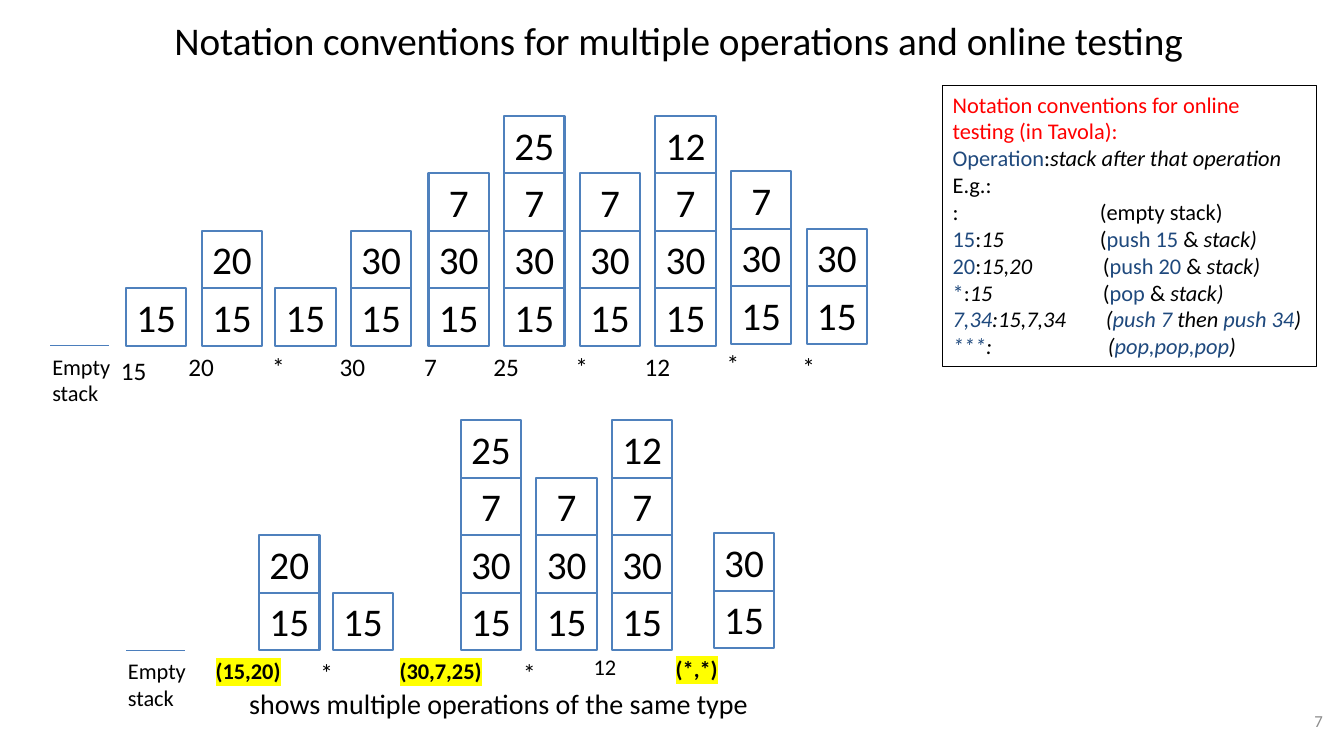
"""Build a slide on stack notation for multiple operations and online testing."""
from lxml.etree import SubElement
from pptx import Presentation
from pptx.dml.color import RGBColor
from pptx.enum.shapes import MSO_CONNECTOR, MSO_SHAPE
from pptx.enum.text import MSO_ANCHOR, PP_ALIGN
from pptx.oxml.ns import qn
from pptx.util import Inches, Pt

BLACK = RGBColor(0x00, 0x00, 0x00)
RED = RGBColor(0xFF, 0x00, 0x00)
NAVY = RGBColor(0x1F, 0x49, 0x7D)
GRAY = RGBColor(0x8C, 0x8C, 0x8C)
CELL_BLUE = RGBColor(0x4F, 0x81, 0xBD)
FLOOR_BLUE = RGBColor(0x4B, 0x7E, 0xBC)
YELLOW = RGBColor(0xFF, 0xFF, 0x00)
LEFT, CENTER, RIGHT = PP_ALIGN.LEFT, PP_ALIGN.CENTER, PP_ALIGN.RIGHT

TITLE = "Notation conventions for multiple operations and online testing"
CAPTION = "shows multiple operations of the same type"
PAGE_NUMBER = "7"
EMPTY_LABEL = "Empty stack"

STACKS = [
    (1.25, 3.43, [15]),
    (2.0, 3.43, [15, 20]),
    (2.73, 3.43, [15]),
    (3.48, 3.43, [15, 30]),
    (4.25, 3.43, [15, 30, 7]),
    (5.0, 3.43, [15, 30, 7, 25]),
    (5.75, 3.43, [15, 30, 7]),
    (6.5, 3.43, [15, 30, 7, 12]),
    (7.25, 3.41, [15, 30, 7]),
    (8.0, 3.41, [15, 30]),
    (2.57, 6.45, [15, 20]),
    (3.3, 6.45, [15]),
    (4.57, 6.45, [15, 30, 7, 25]),
    (5.32, 6.45, [15, 30, 7]),
    (6.07, 6.45, [15, 30, 7, 12]),
    (7.08, 6.43, [15, 30]),
]
EMPTY_STACKS = [(0.5, 3.43), (1.25, 6.45)]

SINGLE_OPERATIONS = [
    ("15", 1.1, 3.48, 0.53, LEFT),
    ("20", 1.77, 3.44, 0.53, LEFT),
    ("*", 2.6, 3.44, 0.33, LEFT),
    ("30", 3.27, 3.44, 0.5, LEFT),
    ("7", 4.02, 3.44, 0.5, CENTER),
    ("25", 4.77, 3.44, 0.5, CENTER),
    ("*", 5.52, 3.44, 0.5, CENTER),
    ("12", 6.27, 3.44, 0.5, CENTER),
    ("*", 7.02, 3.41, 0.5, CENTER),
    ("*", 7.77, 3.44, 0.5, CENTER),
    ("*", 3.08, 6.47, 0.33, LEFT),
    ("*", 5.0, 6.47, 0.5, CENTER),
]
GROUPED_OPERATIONS = [
    ("(15,20)", 2.04, 6.47, 0.87, LEFT),
    ("(30,7,25)", 3.83, 6.47, 1.08, CENTER),
    ("(*,*)", 6.57, 6.45, 0.68, CENTER),
]
LAST_PUSH = ("12", 5.75, 6.43, 0.5, CENTER)

PLAIN = {"color": BLACK}
ITALIC = {"color": BLACK, "italic": True}
BLUE = {"color": NAVY}
BLUE_ITALIC = {"color": NAVY, "italic": True}
HEADING = {"color": RED}

CONVENTIONS = [
    (None, [("Notation conventions for online", HEADING)]),
    (None, [("testing (in Tavola):", HEADING)]),
    (None, [("Operation", BLUE), (":", PLAIN), ("stack after that operation", ITALIC)]),
    (None, [("E.g.:", PLAIN)]),
    (1.46, [(":\t(empty stack)", PLAIN)]),
    (1.46, [("15", BLUE), (":", PLAIN), ("15", ITALIC), ("\t(", PLAIN),
            ("push 15 ", BLUE), ("& ", PLAIN), ("stack)", ITALIC)]),
    (1.49, [("20", BLUE), (":", PLAIN), ("15,20", ITALIC), ("\t(", PLAIN),
            ("push 20 ", BLUE), ("& ", PLAIN), ("stack)", ITALIC)]),
    (1.49, [("*", BLUE), (":", PLAIN), ("15", ITALIC), ("\t(", PLAIN),
            ("pop", BLUE), (" & ", PLAIN), ("stack)", ITALIC)]),
    (1.52, [("7,34", BLUE_ITALIC), (":15,7,34\t(", ITALIC), ("push 7", BLUE_ITALIC),
            (" then ", ITALIC), ("push 34", BLUE_ITALIC), (")", ITALIC)]),
    (1.54, [("***", BLUE_ITALIC), (":\t(", ITALIC), ("pop,pop,pop", BLUE_ITALIC),
            (")", ITALIC)]),
]

CELL_WIDTH, CELL_HEIGHT = 0.6, 0.57
FLOOR_WIDTH = 0.58


def add_run(paragraph, text, size, color=BLACK, **style):
    run = paragraph.add_run()
    run.text = text
    run.font.color.rgb = color
    for name, value in {"name": "Calibri", "size": Pt(size), **style}.items():
        setattr(run.font, name, value)
    return run


def add_label(slide, text, left, top, width, align, height=0.4, size=18,
              anchor=MSO_ANCHOR.TOP, **style):
    label = slide.shapes.add_textbox(*map(Inches, (left, top, width, height)))
    frame = label.text_frame
    frame.word_wrap = True
    frame.vertical_anchor = anchor
    frame.paragraphs[0].alignment = align
    return add_run(frame.paragraphs[0], text, size, **style)


def add_box(slide, left, top, width, height, color, weight):
    box = slide.shapes.add_shape(
        MSO_SHAPE.RECTANGLE, *map(Inches, (left, top, width, height)))
    box.shadow.inherit = False
    box.fill.background()
    box.line.color.rgb = color
    box.line.width = Pt(weight)
    box.text_frame.vertical_anchor = MSO_ANCHOR.TOP
    return box.text_frame


def add_stack(slide, left, bottom, values):
    for level, value in enumerate(values, start=1):
        cell = add_box(slide, left, bottom - level * CELL_HEIGHT,
                       CELL_WIDTH, CELL_HEIGHT, CELL_BLUE, 1.5)
        cell.word_wrap = False
        cell.paragraphs[0].alignment = CENTER
        add_run(cell.paragraphs[0], str(value), 28)


def add_empty_stack(slide, left, bottom):
    floor = slide.shapes.add_connector(
        MSO_CONNECTOR.STRAIGHT,
        *map(Inches, (left, bottom, left + FLOOR_WIDTH, bottom)))
    floor.line.color.rgb = FLOOR_BLUE
    floor.line.width = Pt(0.75)
    SubElement(floor.element.spPr, qn("a:effectLst"))
    add_label(slide, EMPTY_LABEL, left - 0.08, bottom + 0.02, 0.92, LEFT,
              height=0.64, size=16)


def add_highlight(run):
    properties = run._r.get_or_add_rPr()
    highlight = SubElement(properties, qn("a:highlight"))
    SubElement(highlight, qn("a:srgbClr"), val=str(YELLOW))
    properties.find(qn("a:solidFill")).addnext(highlight)


def add_conventions(slide):
    panel = add_box(slide, 9.35, 0.85, 3.71, 2.79, BLACK, 0.75)
    panel.word_wrap = True
    for index, (tab, runs) in enumerate(CONVENTIONS):
        line = panel.add_paragraph() if index else panel.paragraphs[0]
        line.alignment = LEFT
        if tab:
            stops = SubElement(line._p.get_or_add_pPr(), qn("a:tabLst"))
            SubElement(stops, qn("a:tab"), pos=str(Inches(tab)), algn="l")
        for text, style in runs:
            add_run(line, text, 16, **style)


def main():
    deck = Presentation()
    deck.slide_width, deck.slide_height = Inches(13.33), Inches(7.5)
    slide = deck.slides.add_slide(deck.slide_layouts[6])
    middle = MSO_ANCHOR.MIDDLE
    add_label(slide, TITLE, 0.54, 0.11, 12.38, CENTER, 0.58, 28, middle)
    add_label(slide, PAGE_NUMBER, 10.11, 6.95, 3.11, RIGHT, 0.4, 12, middle, color=GRAY)
    for stack in STACKS:
        add_stack(slide, *stack)
    for empty_stack in EMPTY_STACKS:
        add_empty_stack(slide, *empty_stack)
    for operation in SINGLE_OPERATIONS:
        add_label(slide, *operation)
    for operation in GROUPED_OPERATIONS:
        add_highlight(add_label(slide, *operation, height=0.37, size=16, bold=True))
    add_label(slide, *LAST_PUSH, height=0.37, size=16)
    add_conventions(slide)
    add_label(slide, CAPTION, 2.25, 6.7, 5.39, CENTER, 0.55, 20, middle)
    deck.save("out.pptx")


if __name__ == "__main__":
    main()
